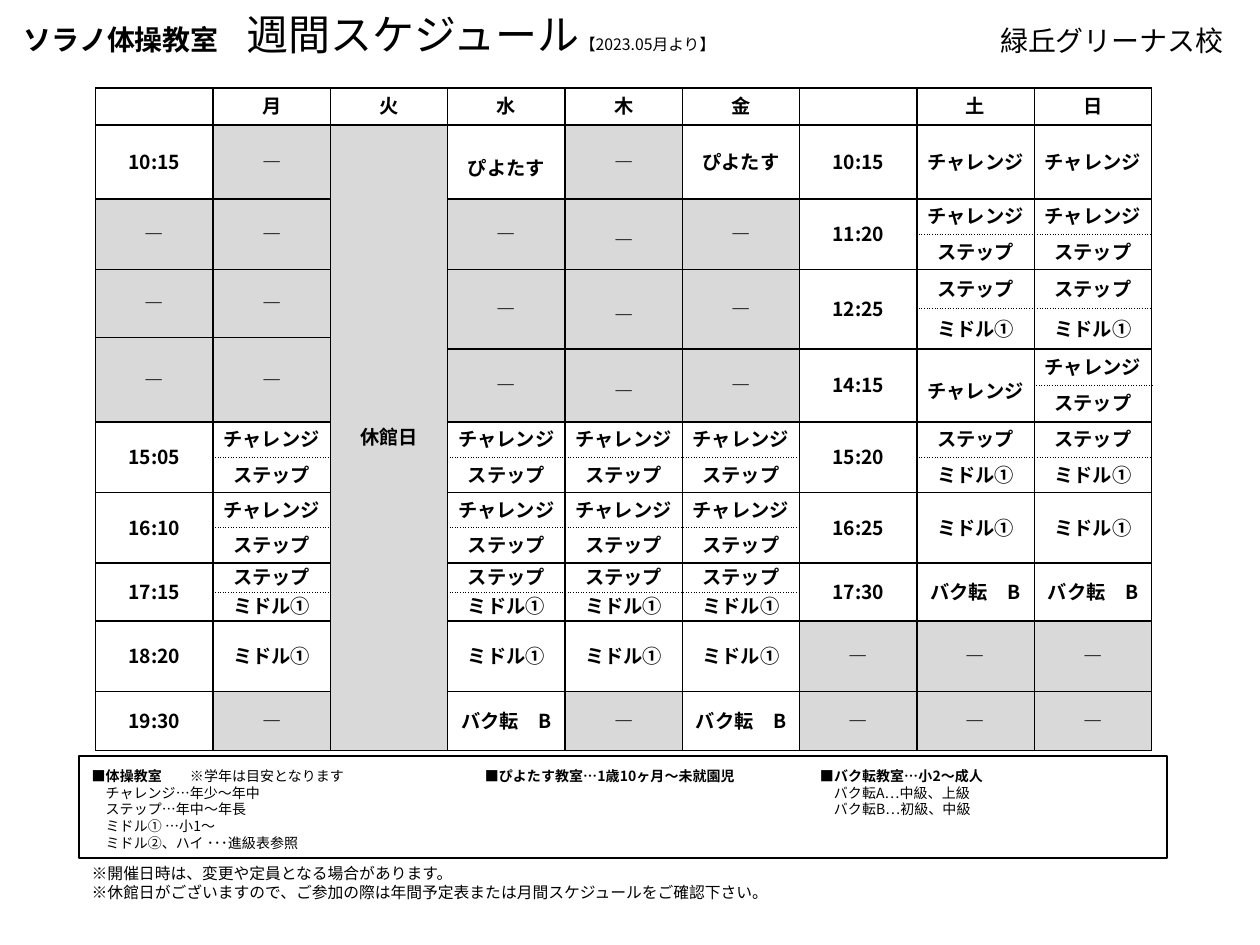
"""Build the weekly gymnastics class schedule slide."""
import pptx
import pptx.dml.color
import pptx.enum.shapes
import pptx.enum.text
import pptx.oxml
import pptx.oxml.ns
import pptx.util
from lxml import etree

BLACK = pptx.dml.color.RGBColor(0, 0, 0)
WHITE = pptx.dml.color.RGBColor(255, 255, 255)
GREY = pptx.dml.color.RGBColor(0xD9, 0xD9, 0xD9)
FONT = "Noto Sans CJK JP"
qn = pptx.oxml.ns.qn
Pt = pptx.util.Pt

prs = pptx.Presentation()
prs.slide_width = pptx.util.Inches(10)
prs.slide_height = pptx.util.Inches(7.5)
unit = prs.slide_width / 100
s = prs.slides.add_slide(prs.slide_layouts[5])


def style(p, size, bold, spacing):
    p.font.size = Pt(size)
    p.font.bold = bold
    p.font.color.rgb = BLACK
    p.font.name = FONT
    etree.SubElement(p.font._rPr, qn("a:ea"), typeface=FONT)
    p.line_spacing = Pt(round(size * spacing, 1))


def place(sp, left, top, width, height):
    sp.left, sp.top = int(left * unit), int(top * unit)
    sp.width, sp.height = int(width * unit), int(height * unit)
    tf = sp.text_frame
    tf.word_wrap = True
    tf.auto_size = pptx.enum.text.MSO_AUTO_SIZE.NONE
    tf.vertical_anchor = pptx.enum.text.MSO_ANCHOR.TOP
    return tf


tf = place(s.shapes.title, 0.9, 0, 65.4, 5)
p = tf.paragraphs[0]
p.alignment = pptx.enum.text.PP_ALIGN.LEFT
style(p, 24, False, 1.25)
for text, size, bold in [("ソラノ体操教室　", 16, True), ("週間スケジュール", 24, False),
                         ("【2023.05月より】", 9, False)]:
    r = p.add_run()
    r.text = text
    r.font.size = Pt(size)
    r.font.bold = bold

TEXTS = [
    ((78.4, 1.3, 21.6, 3.7), 16, 1.25, False, 0, ["緑丘グリーナス校"]),
    ((6.3, 68.1, 68.7, 4), 9, 1.2, False, 0,
     ["※開催日時は、変更や定員となる場合があります。",
      "※休館日がございますので、ご参加の際は年間予定表または月間スケジュールをご確認下さい。"]),
    ((37.5, 60.4, 21.9, 5.4), 8, 1.2, True, 0, ["■ぴよたす教室…1歳10ヶ月～未就園児"]),
    ((6.3, 60.4, 28.6, 7.7), 8, 1.2, True, 8,
     ["■体操教室\t※学年は目安となります", "チャレンジ…年少～年中", "ステップ…年中～年長",
      "ミドル① …小1～", "ミドル②、ハイ ･･･進級表参照"]),
    ((64.1, 60.4, 28.6, 5), 8, 1.2, True, 8,
     ["■バク転教室…小2～成人", "バク転A…中級、上級", "バク転B…初級、中級"]),
]
for box, size, spacing, heading, indent, lines in TEXTS:
    tf = place(s.shapes.add_textbox(0, 0, 0, 0), *box)
    for i, line in enumerate(lines):
        p = tf.paragraphs[0] if i == 0 else tf.add_paragraph()
        style(p, size, heading and i == 0, spacing)
        pPr = p._p.get_or_add_pPr()
        if i:
            pPr.set("marL", str(Pt(indent)))
        head, tab, note = line.partition("\t")
        p.add_run().text = head + tab
        if note:
            tabs = etree.Element(qn("a:tabLst"))
            etree.SubElement(tabs, qn("a:tab"), pos=str(int(7.8 * unit)), algn="l")
            pPr.find(qn("a:defRPr")).addprevious(tabs)
            r = p.add_run()
            r.text = note
            r.font.bold = False

sp = s.shapes.add_shape(pptx.enum.shapes.MSO_SHAPE.RECTANGLE, 0, 0, 0, 0)
place(sp, 6.3, 60, 86.3, 8.1)
sp.shadow.inherit = False
sp.fill.background()
sp.line.color.rgb = BLACK
sp.line.width = Pt(1)

ROWS = [2.9, 5.9, 2.8, 2.8, 3.1, 2.3, 0.9, 2.9, 2.9,
        2.8, 2.8, 2.8, 2.8, 2.3, 2.3, 5.6, 4.7]
EARLY = [1, 1, 2, 2, 3, 2, 2, 2, 1, 1]
LATE = [1, 1, 2, 3, 2, 2, 2, 2, 1, 1]
CS, SM, M, B = "チャレンジ/ステップ", "ステップ/ミドル①", "ミドル①", "バク転　B"
AFTERNOON = [CS, CS, SM, M]
COLUMNS = [
    (EARLY, ["", "10:15", "―", "―", "―", "15:05", "16:10", "17:15", "18:20", "19:30"]),
    (EARLY, ["月", "―", "―", "―", "―", *AFTERNOON, "―"]),
    ([1, 16], ["火", "休館日"]),
    (LATE, ["水", "ぴよたす", "―", "―", "―", *AFTERNOON, B]),
    (LATE, ["木", "―", "―", "―", "―", *AFTERNOON, "―"]),
    (LATE, ["金", "ぴよたす", "―", "―", "―", *AFTERNOON, B]),
    (LATE, ["", "10:15", "11:20", "12:25", "14:15", "15:20", "16:25", "17:30", "―", "―"]),
    (LATE, ["土", "チャレンジ", CS, SM, "チャレンジ", SM, M, B, "―", "―"]),
    (LATE, ["日", "チャレンジ", CS, SM, CS, SM, M, B, "―", "―"]),
]
LOWERED = [(1, 3), (2, 4), (4, 4), (7, 4), (7, 7)]

frame = s.shapes.add_table(len(ROWS), len(COLUMNS), int(7.6 * unit), int(7 * unit),
                           int(83.8 * unit), int(sum(ROWS) * unit))
table = frame.table
table.first_row = table.horz_banding = False
for row, height in zip(table.rows, ROWS):
    row.height = int(height * unit)
for column in table.columns:
    column.width = int(83.8 * unit / len(COLUMNS))

for col, (spans, blocks) in enumerate(COLUMNS):
    top = 0
    for span, block in zip(spans, blocks):
        parts = block.split("/")
        for i, text in enumerate(parts):
            count = span if len(parts) == 1 else (1, span - 1)[i]
            dotted = "" if len(parts) == 1 else "BT"[i]
            for row in range(top, top + count):
                cell = table.cell(row, col)
                tcPr = cell._tc.get_or_add_tcPr()
                for side in "LRTB":
                    ln = etree.SubElement(tcPr, qn("a:ln" + side),
                                          w=str(Pt(0.5 if side == dotted else 1)))
                    fill = etree.SubElement(ln, qn("a:solidFill"))
                    etree.SubElement(fill, qn("a:srgbClr"), val=str(BLACK))
                    etree.SubElement(ln, qn("a:prstDash"),
                                     val="sysDot" if side == dotted else "solid")
                cell.fill.solid()
                cell.fill.fore_color.rgb = GREY if text in ("―", "休館日") else WHITE
                cell.margin_left = cell.margin_right = cell.margin_top = int(0.1 * unit)
                cell.margin_bottom = 0
                cell.vertical_anchor = pptx.enum.text.MSO_ANCHOR.MIDDLE
                p = cell.text_frame.paragraphs[0]
                p.alignment = pptx.enum.text.PP_ALIGN.CENTER
                style(p, 11, True, 1.25)
            cell = table.cell(top, col)
            if count > 1:
                cell.merge(table.cell(top + count - 1, col))
            if (top, col) in LOWERED:
                cell.margin_top = int(1.1 * unit)
            if text == "休館日":
                cell._tc.get_or_add_tcPr().set("vert", "eaVert")
            cell.text_frame.paragraphs[0].add_run().text = text
            top += count

prs.save("out.pptx")
